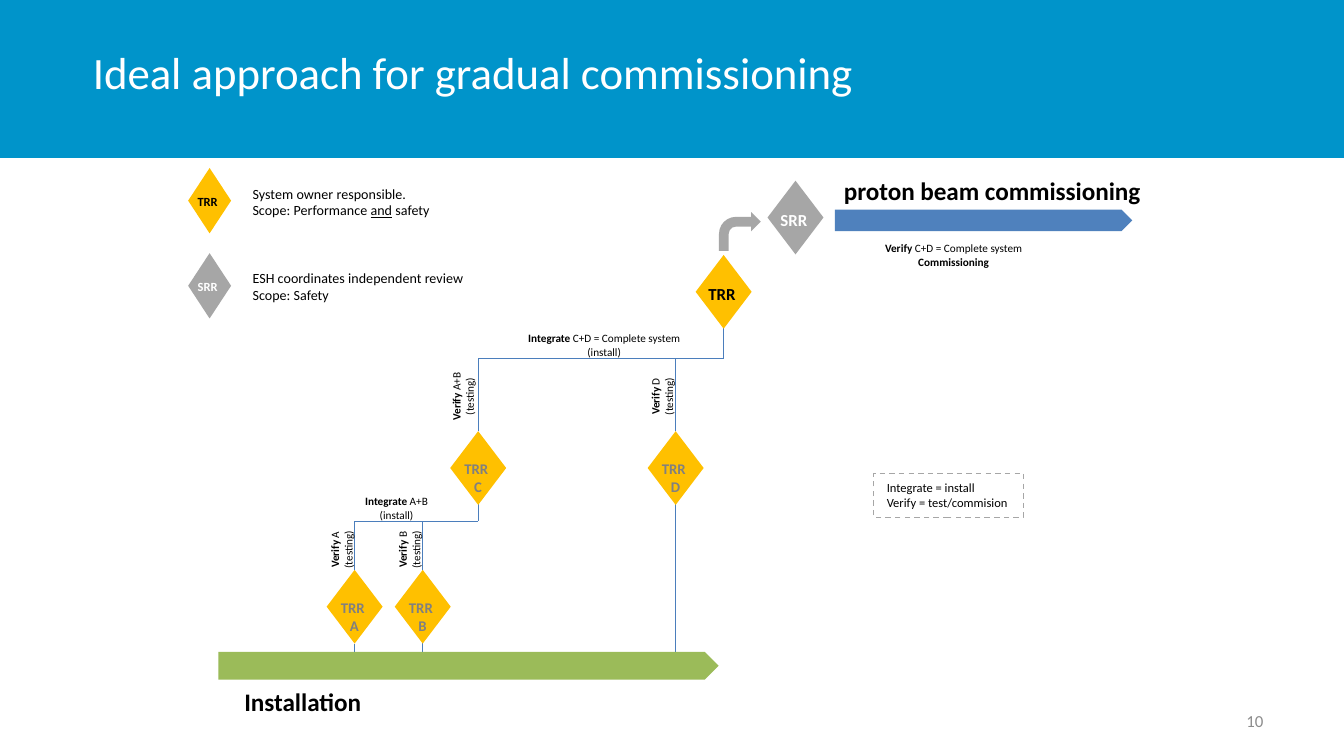
from lxml import etree
from pptx import Presentation
from pptx import util as u
from pptx.dml.color import RGBColor
from pptx.enum import dml, shapes, text
from pptx.oxml.ns import qn

Pt = u.Pt
G = shapes.MSO_SHAPE
LEFT, CENTER, RIGHT = text.PP_ALIGN.LEFT, text.PP_ALIGN.CENTER, text.PP_ALIGN.RIGHT

THEME = {
    "font": "Calibri",
    "color": {"header": "0094CA", "white": "FFFFFF", "black": "000000", "gold": "FFC000",
              "grey": "A6A6A6", "dim": "808080", "number": "8C8C8C", "wire": "4B7EBC",
              "beam": "4F81BD", "install": "9BBB59"},
    "size": {"title": 24, "phase": 13.5, "gate": 9, "number": 9, "step": 7.9,
             "legend": 7.5, "key": 6.75, "note": 6},
}

TITLE = "Ideal approach for gradual commissioning"

X = {"A": 190, "B": 226.5, "C": 256.2, "D": 362, "TRR": 387.7, "SRR": 426.2, "key": 112.3}
Y = {"low": 305.3, "mid": 231, "top": 192, "join": 279.3, "bar": 349.2}

BARS = [
    (G.RECTANGLE, (0, 0, 720, 84.7), "header"),
    (G.PENTAGON, (447.2, 112.4, 159.4, 11.4), "beam"),
    (G.BENT_ARROW, (385.2, 113.6, 22.4, 20.8), "grey"),
    (G.PENTAGON, (117, Y["bar"], 268, 14.9), "install"),
]

WIRES = [
    ("A", 345, "A", 362), ("B", 332, "B", Y["bar"]), ("D", 258, "D", Y["bar"]),
    ("A", Y["join"], "A", Y["low"]), ("B", Y["join"], "B", Y["low"]),
    ("A", Y["join"], "C", Y["join"]), ("C", 242.5, "C", Y["join"]),
    ("C", Y["top"], "C", Y["mid"]), ("D", Y["top"], "D", Y["mid"]),
    ("C", Y["top"], "TRR", Y["top"]), ("TRR", 175, "TRR", Y["top"]),
]

GATE_KINDS = {
    "gate": {"diamond": (30, 39.5), "label": (32, 18), "shift": (-0.9, 11.8)},
    "step": {"diamond": (30, 39.5), "label": (30, 26.6), "shift": (-1, 12)},
    "key": {"diamond": (23, 35), "label": (30, 15.1), "shift": (-1, 10.4)},
}
GATES = [
    ("gate", "TRR", 136.6, ["TRR"], "gold", "black"),
    ("gate", "SRR", 96.8, ["SRR"], "grey", "white"),
    ("step", "B", Y["low"], ["TRR", " B"], "gold", "dim"),
    ("step", "A", Y["low"], ["TRR", " A"], "gold", "dim"),
    ("step", "C", Y["mid"], ["TRR", " C"], "gold", "dim"),
    ("step", "D", Y["mid"], ["TRR", " D"], "gold", "dim"),
    ("key", "key", 90, ["TRR"], "gold", "black"),
    ("key", "key", 135.6, ["SRR"], "grey", "white"),
]

NOTES = [
    ((187.9, 261.4, 49, 21.6), 0, "Integrate", " A+B", "(install)", ""),
    ((274.7, 174.2, 97.9, 21.6), 0, "Integrate", " C+D = Complete system", "(install)", ""),
    ((466.2, 126, 89.3, 21.6), 0, "Verify", " C+D = Complete system", "Commissioning", "b"),
    ((337, 201.6, 35.3, 21.6), 270, "Verify", " D", "(testing)", ""),
    ((227.5, 201.6, 41, 21.6), 270, "Verify", " A+B", "(testing)", ""),
    ((201.6, 283.7, 35.3, 21.6), 270, "Verify", " B", "(testing)", ""),
    ((165.3, 283.7, 35.3, 21.6), 270, "Verify", " A", "(testing)", ""),
]

TEXTS = [
    ((123.8, 364.3, 78.5, 23.8), "phase", "black", LEFT, [[("Installation", "b")]]),
    ((445, 90.4, 175.7, 23.8), "phase", "black", LEFT, [[("proton beam commissioning", "b")]]),
    ((128.2, 95.6, 110.9, 25.2), "legend", "black", LEFT,
     [[("System owner responsible.", "")],
      [("Scope: Performance ", ""), ("and", "u"), (" safety", "")]]),
    ((128.2, 140.8, 128.9, 25.2), "legend", "black", LEFT,
     [[("ESH coordinates independent review", "")], [("Scope: Safety", "")]]),
    ((516.2, 375.1, 167.8, 21.6), "number", "number", RIGHT, [[("10", "")]]),
]

KEY_BOX = (468, 253.6, 80.4, 23.6)
KEY_LINES = [[("Integrate = install", "")], [("Verify = test/commision", "")]]


def rgb(name):
    return RGBColor.from_string(THEME["color"][name])


def set_all(obj, values):
    for name, value in values.items():
        setattr(obj, name, value)


def box(at):
    return [Pt(v) for v in at]


def write(sp, paragraphs, size, color, align, anchor=text.MSO_ANCHOR.TOP, wrap=False):
    tf = sp.text_frame
    fit = text.MSO_AUTO_SIZE.NONE if wrap else text.MSO_AUTO_SIZE.SHAPE_TO_FIT_TEXT
    set_all(tf, {"word_wrap": wrap, "auto_size": fit, "vertical_anchor": anchor})
    for i, runs in enumerate(paragraphs):
        p = tf.add_paragraph() if i else tf.paragraphs[0]
        p.alignment = align
        for words, style in runs:
            r = p.add_run()
            r.text = words
            set_all(r.font, {"name": THEME["font"], "size": Pt(THEME["size"][size]),
                             "bold": "b" in style, "underline": "u" in style})
            r.font.color.rgb = rgb(color)


def add_shape(parent, kind, at, fill=None):
    sp = parent.add_shape(kind, *box(at))
    sp.shadow.inherit = False
    if fill:
        sp.fill.solid()
        sp.fill.fore_color.rgb = rgb(fill)
        sp.line.fill.background()
    else:
        sp.fill.background()
    return sp


def add_text(parent, at, *content, rotation=0, **options):
    sp = parent.add_textbox(*box(at))
    sp.rotation = rotation
    write(sp, *content, **options)


def add_wire(s, start, y1, end, y2):
    line = s.shapes.add_connector(shapes.MSO_CONNECTOR.STRAIGHT, *box((X[start], y1, X[end], y2)))
    line.line.color.rgb = rgb("wire")
    line.line.width = Pt(0.75)
    etree.SubElement(line._element.spPr, qn("a:effectLst"))


def add_gate(s, kind, column, top, lines, fill, color):
    k = GATE_KINDS[kind]
    (w, h), (lw, lh), (dx, dy) = k["diamond"], k["label"], k["shift"]
    x = X[column]
    group = s.shapes.add_group_shape().shapes
    add_shape(group, G.FLOWCHART_SORT, (x - w / 2, top, w, h), fill)
    add_text(group, (x + dx - lw / 2, top + dy, lw, lh),
             [[(line, "b")] for line in lines], kind, color, CENTER)


def main():
    prs = Presentation()
    set_all(prs, {"slide_width": Pt(720), "slide_height": Pt(405)})
    s = prs.slides.add_slide(prs.slide_layouts[5])
    title = s.shapes.title
    set_all(title, dict(zip(("left", "top", "width", "height"), box((42.5, 4.7, 481.7, 67.7)))))
    write(title, [[(TITLE, "")]], "title", "white", LEFT, text.MSO_ANCHOR.MIDDLE, True)

    for wire in WIRES:
        add_wire(s, *wire)
    for bar in BARS:
        add_shape(s.shapes, *bar)
    tree = s.shapes._spTree
    tree.remove(title._element)
    tree.append(title._element)
    for gate in GATES:
        add_gate(s, *gate)
    for at, rotation, verb, target, second, style in NOTES:
        add_text(s.shapes, at, [[(verb, "b"), (target, "")], [(second, style)]],
                 "note", "black", CENTER, rotation=rotation)
    for at, size, color, align, paragraphs in TEXTS:
        number = size == "number"
        anchor = text.MSO_ANCHOR.MIDDLE if number else text.MSO_ANCHOR.TOP
        add_text(s.shapes, at, paragraphs, size, color, align, anchor=anchor, wrap=number)

    key = add_shape(s.shapes, G.RECTANGLE, KEY_BOX)
    key.line.color.rgb = rgb("grey")
    set_all(key.line, {"width": Pt(0.75), "dash_style": dml.MSO_LINE.DASH})
    write(key, KEY_LINES, "key", "black", LEFT)
    prs.save("out.pptx")


if __name__ == "__main__":
    main()
